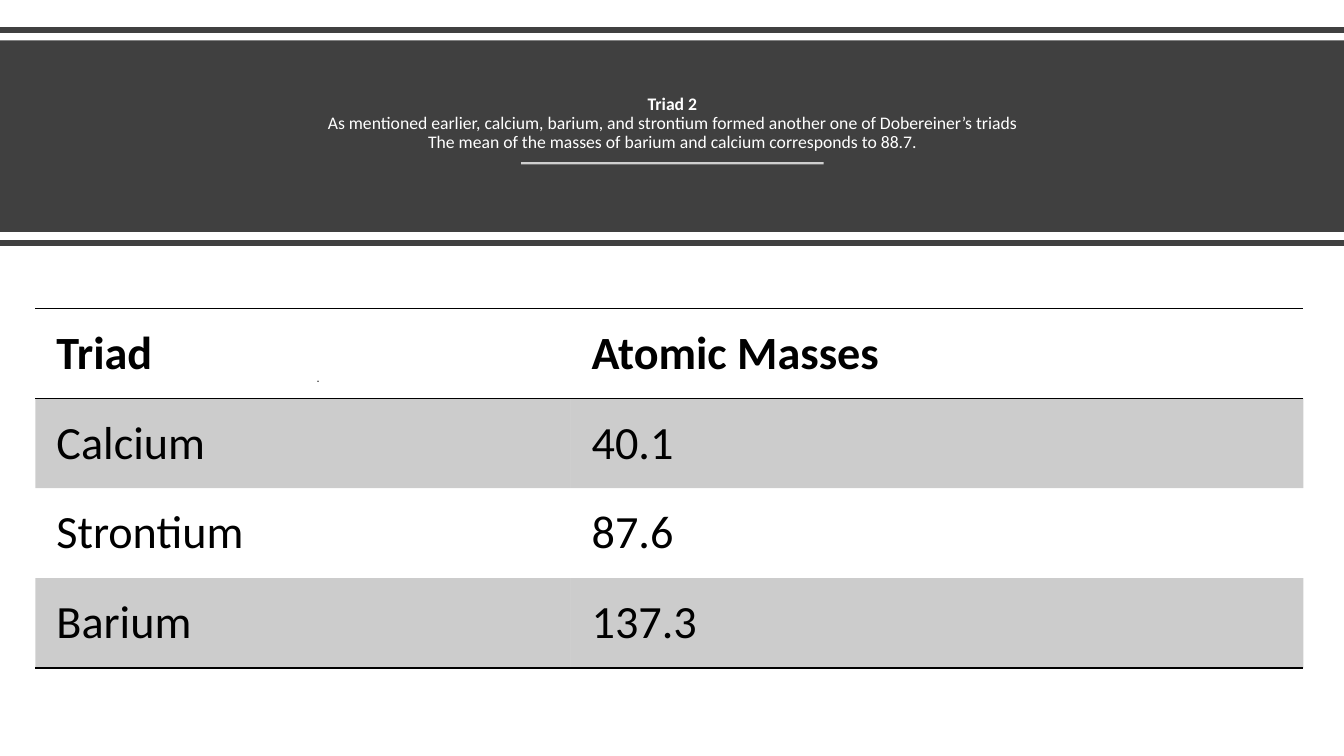
"""Build the slide on Dobereiner's second triad with its atomic masses."""
from dataclasses import dataclass

from lxml import etree
from pptx import Presentation
from pptx import util as u
from pptx.dml.color import RGBColor
from pptx.enum import shapes, text
from pptx.oxml import ns

CHARCOAL = RGBColor(0x40, 0x40, 0x40)
WHITE = RGBColor(0xFF, 0xFF, 0xFF)
BLACK = RGBColor(0, 0, 0)
GREY = RGBColor(0x33, 0x33, 0x33)

CELL = u.Inches(0.1)
SLIDE_COLS, SLIDE_ROWS = 133.33, 75
TABLE_LEFT, TABLE_TOP, ROW_HEIGHT = 3.5, 30.6, 8.92
COLUMN_WIDTHS = (53.1, 72.7)
NO_GRID_STYLE = "{2D5ABB26-0587-4C30-8999-92F81FD0307C}"

HEADING = "Triad 2"
EXPLANATION = (
    "As mentioned earlier, calcium, barium, and strontium formed another one of Dobereiner’s triads",
    "The mean of the masses of barium and calcium corresponds to 88.7.",
)
MASSES = (
    ("Triad", "Atomic Masses"),
    ("Calcium", "40.1"),
    ("Strontium", "87.6"),
    ("Barium", "137.3"),
)


@dataclass(frozen=True)
class Rule:
    """A horizontal line given in grid units."""

    left: float
    right: float
    row: float
    color: RGBColor
    points: float
    alpha: int = 100


RULES = (
    Rule(0, SLIDE_COLS, 3, CHARCOAL, 4),
    Rule(51.7, 81.7, 16.2, WHITE, 1.5, 75),
    Rule(0, SLIDE_COLS, 24.1, CHARCOAL, 4),
)


def grid(*units: float) -> list[int]:
    """Turn grid units into lengths."""
    return [round(unit * CELL) for unit in units]


def assign(target, values: dict) -> None:
    """Set every attribute named in the dict."""
    for name, value in values.items():
        setattr(target, name, value)


def set_alpha(element, percent: int) -> None:
    """Give the colour inside the element an opacity."""
    color = next(element.iter(ns.qn("a:srgbClr")))
    etree.SubElement(color, ns.qn("a:alpha"), val=str(percent * 1000))


def style_run(run, size: float, color: RGBColor, bold: bool = False, face: str = "Calibri") -> None:
    """Format a run of text."""
    assign(run.font, {"name": face, "size": u.Pt(size), "bold": bold})
    run.font.color.rgb = color


def draw_rule(slide, rule: Rule) -> None:
    """Draw one horizontal rule."""
    connector = slide.shapes.add_connector(
        shapes.MSO_CONNECTOR.STRAIGHT, *grid(rule.left, rule.row, rule.right, rule.row))
    connector.line.color.rgb = rule.color
    connector.line.width = u.Pt(rule.points)
    if rule.alpha < 100:
        set_alpha(connector.line._get_or_add_ln(), rule.alpha)
    etree.SubElement(connector._element.spPr, ns.qn("a:effectLst"))


def draw_band(slide) -> None:
    """Draw the dark band behind the title."""
    band = slide.shapes.add_shape(shapes.MSO_SHAPE.RECTANGLE, *grid(0, 4, SLIDE_COLS, 19))
    band.shadow.inherit = False
    band.fill.solid()
    band.fill.fore_color.rgb = CHARCOAL
    band.line.fill.background()


def draw_title(slide) -> None:
    """Write the heading and its explanation."""
    frame = slide.shapes.add_textbox(*grid(5.8, 5.4, 121.8, 10.2)).text_frame
    assign(frame, {"word_wrap": True, "vertical_anchor": text.MSO_ANCHOR.BOTTOM})
    paragraph = frame.paragraphs[0]
    assign(paragraph, {"alignment": text.PP_ALIGN.CENTER, "line_spacing": 0.9})
    for index, words in enumerate((HEADING, *EXPLANATION)):
        if index:
            paragraph.add_line_break()
        run = paragraph.add_run()
        run.text = words
        style_run(run, 12.6, WHITE, bold=index == 0)


def draw_full_stop(slide) -> None:
    """Write the small full stop that lies behind the table."""
    box = slide.shapes.add_textbox(*grid(30.4, 34.6, 2.4, 4.6))
    box.fill.solid()
    box.fill.fore_color.rgb = WHITE
    assign(box.text_frame, {
        "word_wrap": False,
        "auto_size": text.MSO_AUTO_SIZE.SHAPE_TO_FIT_TEXT,
        "vertical_anchor": text.MSO_ANCHOR.MIDDLE,
        "margin_top": u.Inches(0.2),
        "margin_bottom": u.Inches(0.1),
    })
    paragraph = box.text_frame.paragraphs[0]
    paragraph.space_after = u.Pt(6)
    run = paragraph.add_run()
    run.text = "."
    style_run(run, 10, GREY, face="Roboto")


def add_border(cell, side: str) -> None:
    """Put a thin black line on one side of a cell."""
    border = etree.Element(ns.qn(f"a:ln{side}"), w=str(u.Pt(1)))
    fill = etree.SubElement(border, ns.qn("a:solidFill"))
    etree.SubElement(fill, ns.qn("a:srgbClr"), val=str(BLACK))
    cell._tc.get_or_add_tcPr().insert(0, border)


def fill_cell(cell, words: str, row: int) -> None:
    """Write and format one table cell."""
    side, edge = u.Inches(0.21), u.Inches(0.15)
    assign(cell, {
        "margin_left": side, "margin_right": side, "margin_top": edge, "margin_bottom": edge,
        "vertical_anchor": text.MSO_ANCHOR.MIDDLE,
    })
    run = cell.text_frame.paragraphs[0].add_run()
    run.text = words
    style_run(run, 33, BLACK, bold=row == 0)
    if row % 2:
        cell.fill.solid()
        cell.fill.fore_color.rgb = BLACK
        set_alpha(cell._tc.tcPr, 20)
    else:
        cell.fill.background()
    if row in (0, len(MASSES) - 1):
        add_border(cell, "B")
    if row == 0:
        add_border(cell, "T")


def draw_masses(slide) -> None:
    """Draw the table of atomic masses."""
    table = slide.shapes.add_table(
        len(MASSES), len(COLUMN_WIDTHS),
        *grid(TABLE_LEFT, TABLE_TOP, sum(COLUMN_WIDTHS), ROW_HEIGHT * len(MASSES))).table
    assign(table, {"first_row": False, "horz_banding": False})
    table._tbl.tblPr.find(ns.qn("a:tableStyleId")).text = NO_GRID_STYLE
    for column, width in zip(table.columns, grid(*COLUMN_WIDTHS)):
        column.width = width
    for row, entries in enumerate(MASSES):
        for column, words in enumerate(entries):
            fill_cell(table.cell(row, column), words, row)


def main() -> None:
    """Build and save the slide."""
    deck = Presentation()
    deck.slide_width, deck.slide_height = grid(SLIDE_COLS, SLIDE_ROWS)
    slide = deck.slides.add_slide(deck.slide_layouts[6])
    draw_band(slide)
    draw_title(slide)
    for rule in RULES:
        draw_rule(slide, rule)
    draw_full_stop(slide)
    draw_masses(slide)
    deck.save("out.pptx")


if __name__ == "__main__":
    main()
